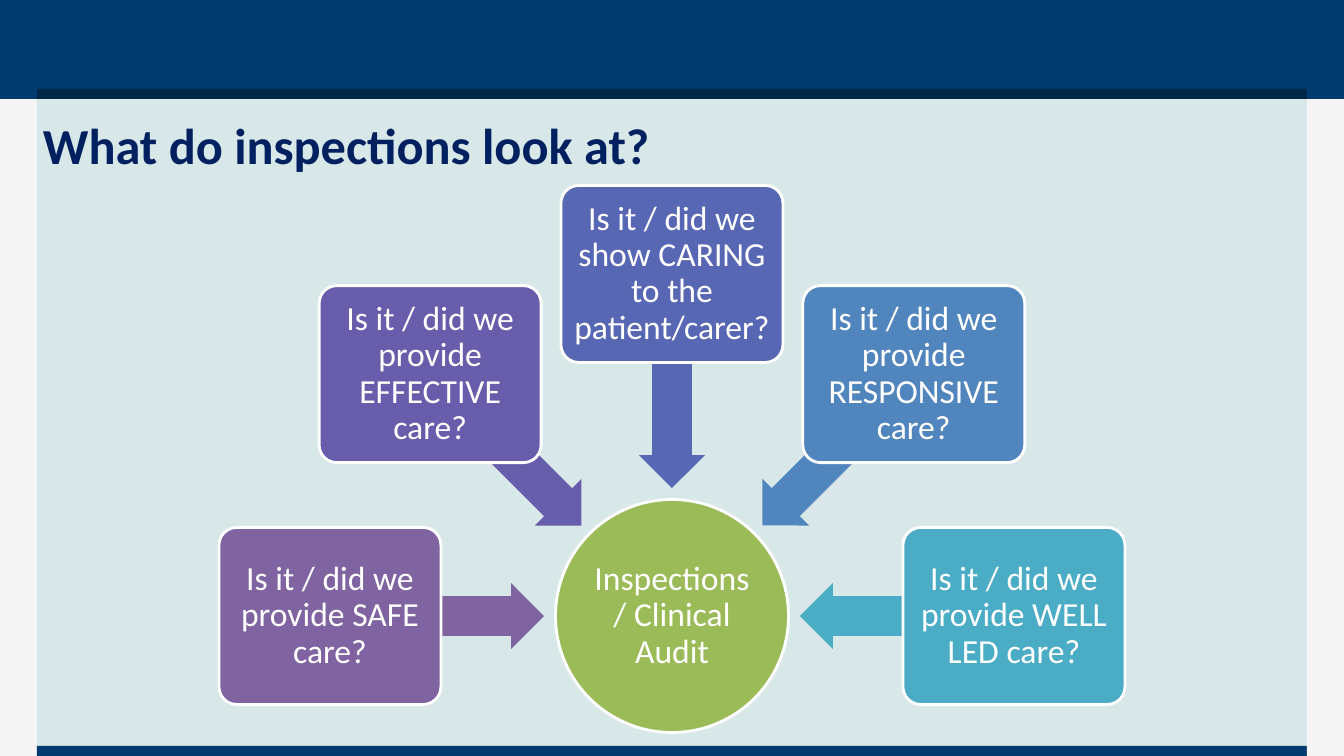
import math

from pptx import Presentation
from pptx import util as u
from pptx.dml.color import RGBColor
from pptx.enum import shapes, text

COLOURS = {
    "background": "D8E8E9", "side": "F5F5F5", "band": "003B6F", "shade": "002648",
    "title": "002060", "white": "FFFFFF", "hub": "9BBB59", "safe": "8064A2",
    "effective": "685DAB", "caring": "5767B4", "responsive": "5185BD", "well led": "4BACC6",
}
TITLE = "What do inspections look at?"
HUB = "Inspections / Clinical Audit"
QUESTIONS = [
    ("safe", "Is it / did we provide SAFE care?"),
    ("effective", "Is it / did we provide EFFECTIVE care?"),
    ("caring", "Is it / did we show CARING to the patient/carer?"),
    ("responsive", "Is it / did we provide RESPONSIVE care?"),
    ("well led", "Is it / did we provide WELL LED care?"),
]
FRAME = [
    ("side", 0, 99, 37, 657),
    ("band", 0, 0, 1344, 99),
    ("shade", 37, 89, 1270, 10),
    ("band", 37, 746, 1270, 10),
    ("side", 1307, 99, 37, 657),
]
FONT = "Calibri"
CENTRE = (672, 616)
HUB_SIZE = (233, 233)
BOX_SIZE = (222, 177)
ARROW_SIZE = (214, 66)
BOX_RADIUS = 342
ARROW_RADIUS = 235
FIRST_ANGLE, ANGLE_STEP = 180, 45


def px(value):
    return u.Emu(round(value * 914400 / 100.8))


def colour(name):
    return RGBColor.from_string(COLOURS[name])


def add_shape(slide, kind, fill, left, top, width, height, outlined=False):
    shape = slide.shapes.add_shape(kind, px(left), px(top), px(width), px(height))
    shape.shadow.inherit = False
    shape.fill.solid()
    shape.fill.fore_color.rgb = colour(fill)
    if outlined:
        shape.line.color.rgb = colour("white")
        shape.line.width = u.Pt(2)
    else:
        shape.line.fill.background()
    return shape


def add_centred(slide, kind, fill, centre, size, outlined=False):
    left, top = (middle - length / 2 for middle, length in zip(centre, size))
    return add_shape(slide, kind, fill, left, top, *size, outlined)


def around_hub(angle, radius):
    turn = math.radians(angle)
    return CENTRE[0] + radius * math.cos(turn), CENTRE[1] + radius * math.sin(turn)


def write(shape, words, size, ink, bold=False):
    frame = shape.text_frame
    frame.text = words
    frame.word_wrap = True
    frame.vertical_anchor = text.MSO_ANCHOR.MIDDLE
    font = frame.paragraphs[0].runs[0].font
    font.name, font.size, font.bold = FONT, u.Pt(size), bold
    font.color.rgb = colour(ink)
    return frame


def write_label(shape, words, inset):
    frame = write(shape, words, 24, "white")
    frame.margin_left = frame.margin_right = px(inset)
    frame.margin_top = frame.margin_bottom = px(inset)
    paragraph = frame.paragraphs[0]
    paragraph.alignment = text.PP_ALIGN.CENTER
    paragraph.line_spacing = 0.9


def main():
    presentation = Presentation()
    presentation.slide_width, presentation.slide_height = px(1344), px(756)
    slide = presentation.slides.add_slide(presentation.slide_layouts[6])
    slide.background.fill.solid()
    slide.background.fill.fore_color.rgb = colour("background")

    kinds = shapes.MSO_SHAPE
    for fill, *place in FRAME:
        add_shape(slide, kinds.RECTANGLE, fill, *place)

    hub = add_centred(slide, kinds.OVAL, "hub", CENTRE, HUB_SIZE, outlined=True)
    write_label(hub, HUB, 2)

    for index, (fill, question) in enumerate(QUESTIONS):
        angle = FIRST_ANGLE + index * ANGLE_STEP
        arrow = add_centred(slide, kinds.LEFT_ARROW, fill,
                            around_hub(angle, ARROW_RADIUS), ARROW_SIZE)
        arrow.adjustments[0], arrow.adjustments[1] = 0.6, 0.5
        arrow.rotation = angle % 360
        box = add_centred(slide, kinds.ROUNDED_RECTANGLE, fill,
                          around_hub(angle, BOX_RADIUS), BOX_SIZE, outlined=True)
        box.adjustments[0] = 0.1
        write_label(box, question, 5)

    title = slide.shapes.add_textbox(px(33), px(104), px(1210), px(81))
    write(title, TITLE, 36, "title", bold=True)
    presentation.save("out.pptx")


if __name__ == "__main__":
    main()
